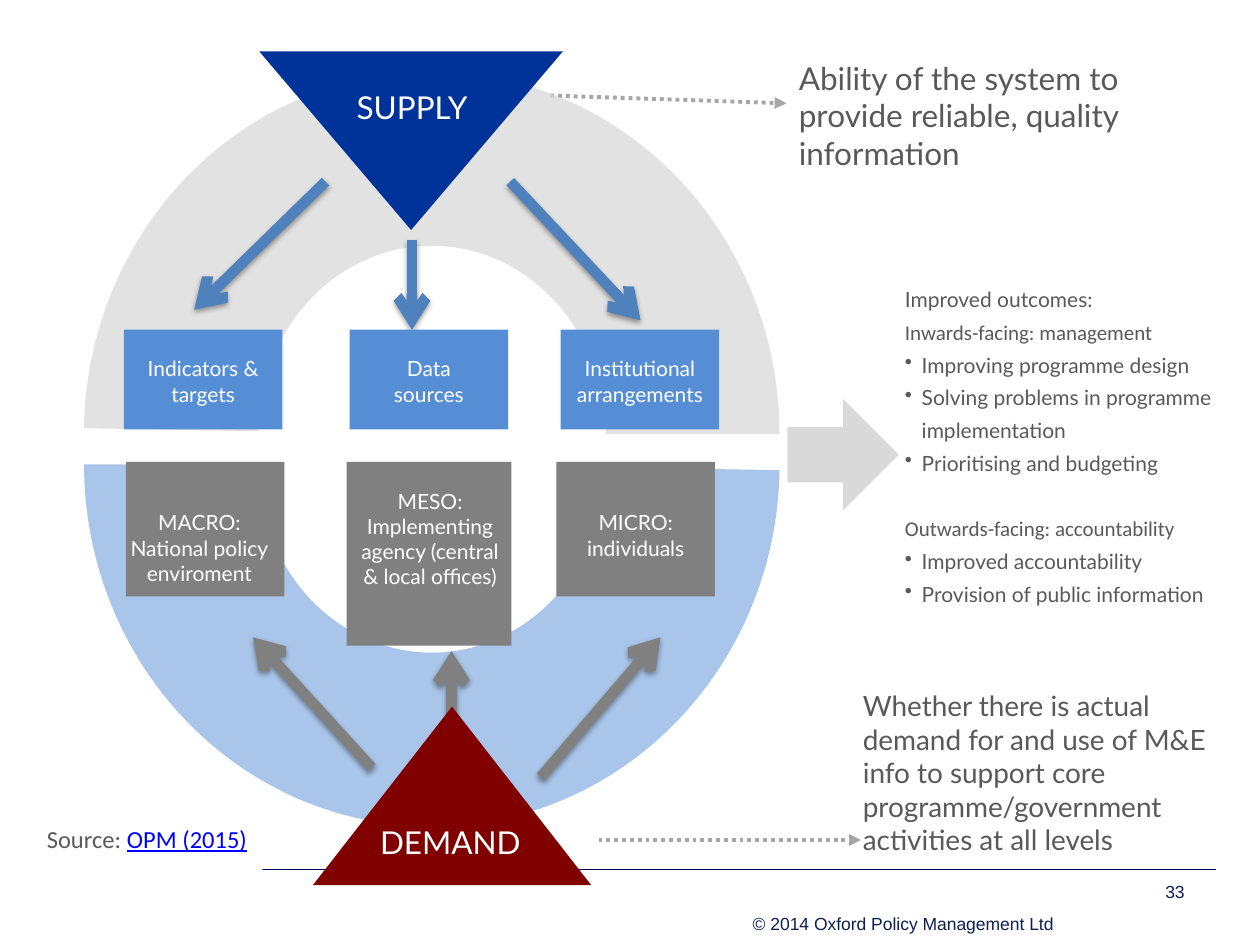
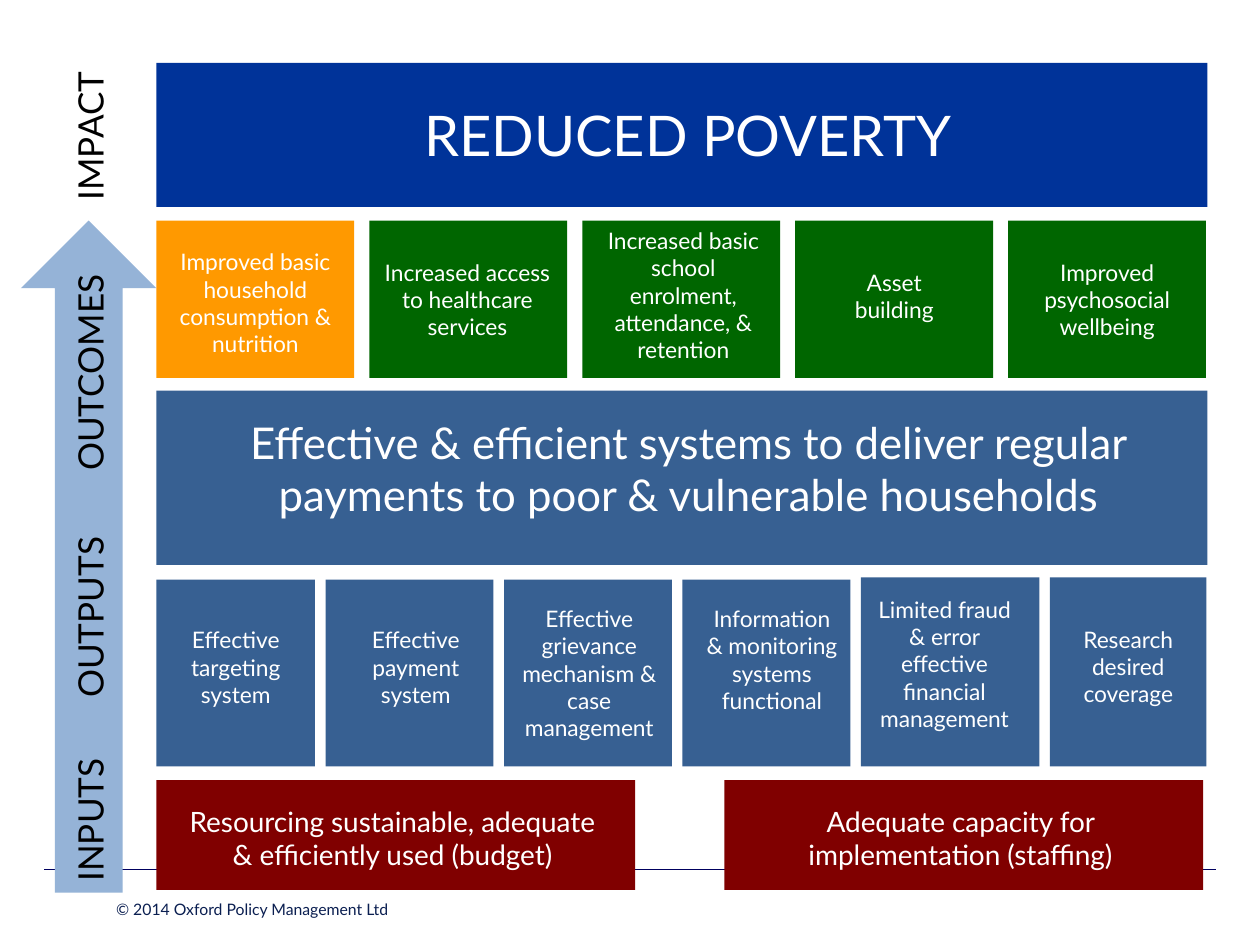
from collections.abc import Sequence
from dataclasses import dataclass

import lxml.etree
import pptx
import pptx.dml.color
import pptx.enum.dml
import pptx.enum.shapes
import pptx.enum.text
import pptx.oxml.ns
import pptx.util

SHAPE = pptx.enum.shapes.MSO_SHAPE
ALIGN = pptx.enum.text.PP_ALIGN
ANCHOR = pptx.enum.text.MSO_ANCHOR
qn = pptx.oxml.ns.qn

# The slide is a grid of 120 columns by 90 rows of square cells.
COLUMNS, ROWS = 120, 90
WIDTH, HEIGHT = pptx.util.Inches(10), pptx.util.Inches(7.5)
SIDE_PAD, TOP_PAD = 1.2, 0.6

BODY_FONT, PLAIN_FONT, FOOTER_FONT = "Lato", "Calibri", "Arial"
WHITE, BLACK, TEXT_GRAY = "FFFFFF", "000000", "595959"
NAVY, RULE, FOOTER = "003399", "00005E", "0B1F51"
MAROON, GREEN, ORANGE = "800000", "006600", "FF9900"
STEEL, SKY, ARROW_BLUE, PALE_BLUE = "376092", "558ED5", "4F81BD", "95B3D7"
GRAY, DOT_GRAY, LIGHT_GRAY, ARC_BLUE = "808080", "A6A6A6", "D9D9D9", "8EB4E3"
COPYRIGHT = "© 2014 Oxford Policy Management Ltd"


@dataclass(frozen=True)
class Area:
    left: float
    top: float
    width: float
    height: float

    def lengths(self) -> tuple[int, int, int, int]:
        return cells(self.left), cells(self.top), cells(self.width), cells(self.height)


@dataclass(frozen=True)
class Pads:
    top: float = TOP_PAD
    left: float = SIDE_PAD
    right: float = SIDE_PAD


@dataclass(frozen=True)
class Card:
    area: Area
    fill: str
    lines: tuple[str, ...]
    pads: Pads
    size: float = 12


@dataclass(frozen=True)
class Arrow:
    start: tuple[float, float]
    end: tuple[float, float]


@dataclass(frozen=True)
class Line:
    text: str
    font: str = BODY_FONT
    bullet: bool = False
    space_before: float = 0


SUPPLY_ARROWS = (
    Arrow((31, 17.3), (18.5, 29.5)),
    Arrow((39.24, 22.9), (39.24, 31.4)),
    Arrow((48.6, 17.3), (61, 30.5)),
)
DEMAND_ARROWS = (
    Arrow((35.4, 73.1), (24.1, 60.7)),
    Arrow((43, 70.6), (43, 62)),
    Arrow((51.5, 74), (62.9, 60.7)),
)
SUPPLY_CARDS = tuple(
    Card(Area(left, 31.4, 15.1, 9.5), SKY, lines, Pads(2.5))
    for left, lines in (
        (11.8, ("Indicators & targets",)),
        (33.3, ("Data", "sources")),
        (53.4, ("Institutional arrangements",)),
    )
)
DEMAND_CARDS = (
    Card(Area(12, 44, 15.1, 12.8), GRAY, ("MACRO:", "National policy", "enviroment"),
         Pads(4.56, 0, 1.1)),
    Card(Area(33, 44, 15.7, 17.5), GRAY,
         ("MESO:", "Implementing agency (central & local offices)"), Pads(2.5, 1.2, 0.96)),
    Card(Area(53, 44, 15.1, 12.8), GRAY, ("MICRO:", "individuals"), Pads(4.56)),
)
OUTCOME_LINES = (
    Line("Improved outcomes:"),
    Line("Inwards-facing: management", PLAIN_FONT),
    Line("Improving programme design", bullet=True),
    Line("Solving problems in programme implementation", bullet=True),
    Line("Prioritising and budgeting", bullet=True),
    Line("Outwards-facing: accountability", PLAIN_FONT, space_before=18.7),
    Line("Improved accountability", bullet=True),
    Line("Provision of public information", bullet=True),
)

CHAIN_LEFT, CHAIN_WIDTH = 14.9, 100.1
OUTCOME_STEP = 20.28
OUTCOMES = (
    (ORANGE, ("Improved basic household consumption & nutrition",), Pads(2.64)),
    (GREEN, ("Increased access to healthcare services",), Pads(3.6, 1, 1.2)),
    (GREEN, ("Increased basic school enrolment, attendance, & retention",), Pads(0.6, 1.8, 1.4)),
    (GREEN, ("Asset", "building"), Pads(4.6)),
    (GREEN, ("Improved psychosocial wellbeing",), Pads(3.6)),
)
CHAIN_CARDS = (
    Card(Area(CHAIN_LEFT, 6, CHAIN_WIDTH, 13.7), NAVY, ("REDUCED POVERTY",),
         Pads(3.6, 6.4, 5.2), 32),
    Card(Area(CHAIN_LEFT, 37.2, CHAIN_WIDTH, 16.6), STEEL,
         ("Effective & efficient systems to deliver regular payments to poor "
          "& vulnerable households",), Pads(2.4, 6.4, 5.2), 25),
    *(
        Card(Area(CHAIN_LEFT + index * OUTCOME_STEP, 21, 18.84, 15), fill, lines, pads, 13)
        for index, (fill, lines, pads) in enumerate(OUTCOMES)
    ),
    *(
        Card(Area(left, top, width, 73 - top), STEEL, lines, pads, 13)
        for left, top, width, lines, pads in (
            (CHAIN_LEFT, 55.2, 15.1, ("Effective targeting", "system"), Pads(4.44)),
            (31, 55.2, 16, ("Effective payment system",), Pads(4.44, 2.28, 1.1)),
            (48, 55.2, 16, ("Effective grievance mechanism & case management",),
             Pads(2.4, 1.2, 0.96)),
            (65, 55.2, 16, ("Information & monitoring systems functional",), Pads(2.4, 2.2)),
            (82, 55, 17, ("Limited fraud & error effective financial management",),
             Pads(1.7, 1.2, 2.28)),
            (100, 55, 14.9, ("Research desired coverage",), Pads(4.56)),
        )
    ),
    *(
        Card(Area(left, 74.3, 45.6, 10.45), MAROON, lines, Pads(2.28, 1.2, 1.8), 16)
        for left, lines in (
            (CHAIN_LEFT, ("Resourcing sustainable, adequate", "& efficiently used (budget)")),
            (69, ("Adequate capacity for implementation (staffing)",)),
        )
    ),
)
# Each stage name with the row of its middle.
STAGES = (("IMPACT", 12.96), ("OUTCOMES", 35.5), ("OUTPUTS", 58.8), ("INPUTS", 78.1))


def cells(count: float) -> int:
    return round(count * WIDTH / COLUMNS)


def color(value: str) -> pptx.dml.color.RGBColor:
    return pptx.dml.color.RGBColor.from_string(value)


def sub_element(parent, tag: str, **attributes):
    return lxml.etree.SubElement(parent, qn(tag), {k: str(v) for k, v in attributes.items()})


def style_font(font, *, size: float, name: str, ink: str) -> None:
    font.size = pptx.util.Pt(size)
    font.name = name
    font.color.rgb = color(ink)


def write_text(shape, lines: Sequence[str | Line], *, size: float, font: str = BODY_FONT,
               ink: str = WHITE, align=ALIGN.CENTER, anchor=ANCHOR.TOP,
               pads: Pads = Pads(), spacing: float | None = None):
    """Fill the shape with one paragraph per line and return the last paragraph."""
    frame = shape.text_frame
    frame.word_wrap = True
    frame.vertical_anchor = anchor
    frame.margin_left, frame.margin_right = cells(pads.left), cells(pads.right)
    frame.margin_top, frame.margin_bottom = cells(pads.top), 0
    for index, entry in enumerate(lines):
        line = entry if isinstance(entry, Line) else Line(entry, font)
        paragraph = frame.paragraphs[0] if index == 0 else frame.add_paragraph()
        paragraph.alignment = align
        if spacing:
            paragraph.line_spacing = spacing
        if line.space_before:
            paragraph.space_before = pptx.util.Pt(line.space_before)
        if line.bullet:
            properties = paragraph._p.get_or_add_pPr()
            indent = cells(1.6)
            properties.set("marL", str(indent))
            properties.set("indent", str(-indent))
            sub_element(properties, "a:buChar", char="•")
        run = paragraph.add_run()
        run.text = line.text
        style_font(run.font, size=size, name=line.font, ink=ink)
    return paragraph


def add_label(slide, area: Area, lines: Sequence[str | Line], **text_format):
    label = slide.shapes.add_textbox(*area.lengths())
    write_text(label, lines, **text_format)
    return label


def add_block(slide, kind, area: Area, fill: str, *, rotation: float = 0,
              opacity: int | None = None):
    """Add a borderless preset shape; opacity is a percentage."""
    shape = slide.shapes.add_shape(kind, *area.lengths())
    shape.shadow.inherit = False
    shape.rotation = rotation
    shape.fill.solid()
    shape.fill.fore_color.rgb = color(fill)
    shape.line.fill.background()
    if opacity is not None:
        tint = shape._element.spPr.find(qn("a:solidFill")).find(qn("a:srgbClr"))
        sub_element(tint, "a:alpha", val=opacity * 1000)
    return shape


def add_cards(slide, cards: Sequence[Card]) -> None:
    for card in cards:
        shape = add_block(slide, SHAPE.RECTANGLE, card.area, card.fill)
        write_text(shape, card.lines, size=card.size, pads=card.pads)


def add_line(slide, arrow: Arrow, ink: str, width: float, *, head: str | None = None,
             dotted: bool = False, shadow: bool = False) -> None:
    connector = slide.shapes.add_connector(
        pptx.enum.shapes.MSO_CONNECTOR.STRAIGHT,
        *(cells(value) for value in (*arrow.start, *arrow.end)))
    connector.line.color.rgb = color(ink)
    connector.line.width = pptx.util.Pt(width)
    if dotted:
        connector.line.dash_style = pptx.enum.dml.MSO_LINE.ROUND_DOT
    properties = connector._element.spPr
    if head:
        sub_element(properties.find(qn("a:ln")), "a:tailEnd", type=head)
    effects = sub_element(properties, "a:effectLst")
    if shadow:
        outer = sub_element(effects, "a:outerShdw", blurRad=40000, dist=20000,
                            dir=5400000, rotWithShape=0)
        sub_element(sub_element(outer, "a:srgbClr", val=BLACK), "a:alpha", val=38000)


def add_arrows(slide, arrows: Sequence[Arrow], ink: str) -> None:
    for arrow in arrows:
        add_line(slide, arrow, ink, 6, head="arrow", shadow=True)


def add_half_ring(slide, top: float, fill: str, rotation: float) -> None:
    ring = add_block(slide, SHAPE.BLOCK_ARC, Area(8, top, 66.24, 69), fill,
                     rotation=rotation, opacity=76)
    for index, value in enumerate((108.58, 0, 0.25)):
        ring.adjustments[index] = value


def start_slide(presentation, copyright_area: Area, **copyright_format):
    """Add a blank slide with the footer rule and the copyright line."""
    slide = presentation.slides.add_slide(presentation.slide_layouts[6])
    add_line(slide, Arrow((4.2, 82.8), (115.8, 82.8)), RULE, 1)
    add_label(slide, copyright_area, [COPYRIGHT], ink=FOOTER, anchor=ANCHOR.MIDDLE,
              pads=Pads(0), **copyright_format)
    return slide


def build_supply_and_demand(presentation) -> None:
    slide = start_slide(presentation, Area(67, 86.4, 38, 3.1), size=10, font=FOOTER_FONT)
    add_label(slide, Area(86, 83.4, 28, 3.1), ["33"], size=10, font=FOOTER_FONT, ink=FOOTER,
              align=ALIGN.RIGHT, anchor=ANCHOR.MIDDLE, pads=Pads(0))
    for arrow, area, text, size in (
        (Arrow((52.4, 9.1), (74.9, 9.84)), Area(74.9, 5, 34.9, 12.1),
         "Ability of the system to provide reliable, quality information", 18),
        (Arrow((57, 80), (82, 80)), Area(81, 65, 37.2, 17.4),
         "Whether there is actual demand for and use of M&E info to support core "
         "programme/government activities at all levels", 16),
    ):
        add_line(slide, arrow, DOT_GRAY, 2.25, head="triangle", dotted=True)
        add_label(slide, area, [text], size=size, ink=TEXT_GRAY, align=ALIGN.LEFT)

    source = add_block(slide, SHAPE.RECTANGLE, Area(3, 75, 22, 12.5), WHITE)
    paragraph = write_text(source, ["Source: "], size=14, font=PLAIN_FONT, ink=TEXT_GRAY,
                           pads=Pads(3.45, 0.6, 0.6))
    citation = paragraph.add_run()
    citation.text = "OPM (2015)"
    style_font(citation.font, size=14, name=PLAIN_FONT, ink="0000FF")
    citation.font.underline = True

    add_block(slide, SHAPE.RIGHT_ARROW, Area(75, 38, 10.6, 10.6), LIGHT_GRAY)
    add_half_ring(slide, 6.84, LIGHT_GRAY, 0)
    add_arrows(slide, SUPPLY_ARROWS, ARROW_BLUE)
    add_block(slide, SHAPE.ISOSCELES_TRIANGLE, Area(24.7, 4.9, 28.9, 17), NAVY, rotation=180)
    add_label(slide, Area(32, 7.8, 14.5, 4.6), ["SUPPLY"], size=18)
    add_cards(slide, SUPPLY_CARDS)

    add_half_ring(slide, 9.72, ARC_BLUE, 180)
    add_arrows(slide, DEMAND_ARROWS, GRAY)
    add_block(slide, SHAPE.ISOSCELES_TRIANGLE, Area(29.8, 67.3, 26.5, 17), MAROON)
    add_label(slide, Area(34.4, 77.8, 17, 4.6), ["DEMAND"], size=18)
    add_cards(slide, DEMAND_CARDS)
    add_label(slide, Area(85, 26, 34, 32.6), OUTCOME_LINES, size=12, ink=TEXT_GRAY,
              align=ALIGN.LEFT, spacing=1.3)


def build_results_chain(presentation) -> None:
    slide = start_slide(presentation, Area(5, 85, 38, 3.1), size=9)
    add_block(slide, SHAPE.UP_ARROW, Area(2, 21, 12.9, 64), PALE_BLUE)
    add_cards(slide, CHAIN_CARDS)
    width, height, middle = 23, 5.3, 8.6
    for name, row in STAGES:
        area = Area(middle - width / 2, row - height / 2, width, height)
        add_label(slide, area, [name], size=20, ink=BLACK).rotation = 270


def main() -> None:
    presentation = pptx.Presentation()
    presentation.slide_width, presentation.slide_height = WIDTH, HEIGHT
    build_supply_and_demand(presentation)
    build_results_chain(presentation)
    presentation.save("out.pptx")


if __name__ == "__main__":
    main()
